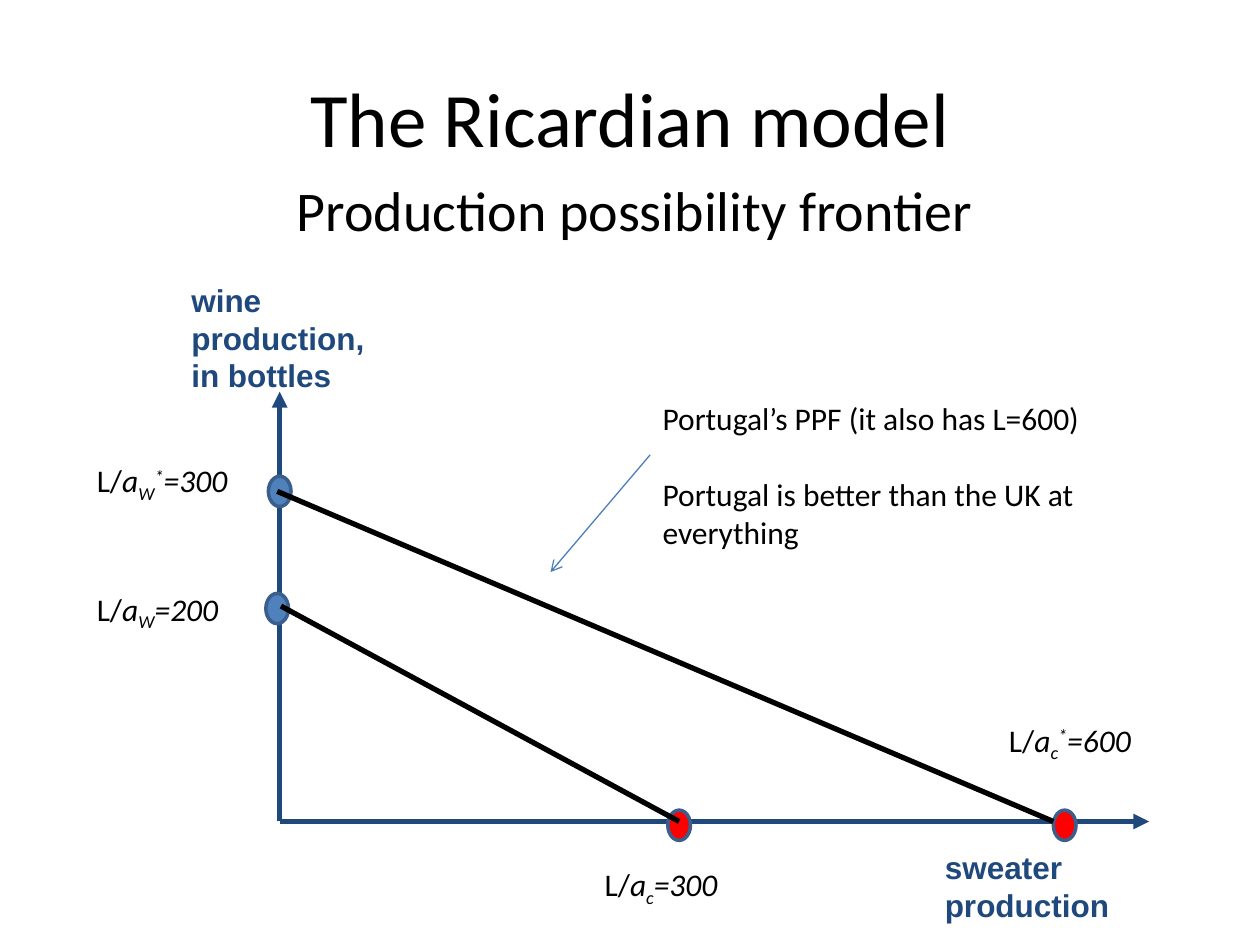
from lxml import etree
from pptx import Presentation
from pptx.dml.color import RGBColor
from pptx.enum.shapes import MSO_CONNECTOR, MSO_SHAPE
from pptx.enum.text import MSO_ANCHOR, PP_ALIGN
from pptx.oxml.ns import qn
from pptx.util import Inches, Pt

STRAIGHT = MSO_CONNECTOR.STRAIGHT
MARKER = MSO_SHAPE.FLOWCHART_CONNECTOR
CENTER, LEFT = PP_ALIGN.CENTER, PP_ALIGN.LEFT
MIDDLE = MSO_ANCHOR.MIDDLE
BLACK, NAVY, BLUE, RED = "000000", "1F497D", "4F81BD", "FF0000"
MARKER_EDGE, POINTER = "3A5F8C", "4B7EBC"
MARKER_W, MARKER_H = 0.18, 0.24
TITLE_ONLY = 5


def color(value):
    return RGBColor.from_string(value)


def add_run(paragraph, text, size=18, font="Calibri", ink=BLACK,
            bold=False, italic=False, baseline=0):
    """Add a run; baseline is the percent raised (or lowered, if negative)."""
    run = paragraph.add_run()
    run.text = text
    run.font.size = Pt(size)
    run.font.name = font
    run.font.bold = bold
    run.font.italic = italic
    run.font.color.rgb = color(ink)
    if baseline:
        run._r.get_or_add_rPr().set("baseline", str(baseline * 1000))


def add_text(slide, box, lines, gap=0, align=LEFT, wrap=True, **style):
    """Add a text box with one paragraph per line, gap points apart."""
    frame = slide.shapes.add_textbox(*map(Inches, box)).text_frame
    frame.word_wrap = wrap
    for index, line in enumerate(lines):
        paragraph = frame.add_paragraph() if index else frame.paragraphs[0]
        paragraph.alignment = align
        if index:
            paragraph.space_before = Pt(gap)
        add_run(paragraph, line, **style)


def add_line(slide, start, end, ink, width, arrow=None):
    line = slide.shapes.add_connector(STRAIGHT, *map(Inches, (*start, *end)))
    line.line.color.rgb = color(ink)
    line.line.width = Pt(width)
    if arrow:
        etree.SubElement(line.line._get_or_add_ln(), qn("a:tailEnd"), type=arrow)
    etree.SubElement(line._element.spPr, qn("a:effectLst"))


def add_marker(slide, center, fill):
    x, y = center
    marker = slide.shapes.add_shape(
        MARKER, Inches(x - MARKER_W / 2), Inches(y - MARKER_H / 2),
        Inches(MARKER_W), Inches(MARKER_H))
    marker.shadow.inherit = False
    marker.fill.solid()
    marker.fill.fore_color.rgb = color(fill)
    marker.line.color.rgb = color(MARKER_EDGE)
    marker.line.width = Pt(2)


def add_intercept_label(slide, box, good, amount, foreign=False):
    """Label an intercept as L/a with the good as subscript."""
    frame = slide.shapes.add_textbox(*map(Inches, box)).text_frame
    frame.word_wrap = True
    paragraph = frame.paragraphs[0]
    add_run(paragraph, "L/")
    add_run(paragraph, "a", italic=True)
    add_run(paragraph, good, italic=True, baseline=-25)
    if foreign:
        add_run(paragraph, "*", italic=True, baseline=30)
    add_run(paragraph, f"={amount}", italic=True)


def add_heading(slide, box):
    left, top, width, height = box
    title = slide.shapes.title
    title.left, title.top = Inches(left), Inches(top)
    title.width, title.height = Inches(width), Inches(height)
    title.text_frame.vertical_anchor = MIDDLE
    paragraph = title.text_frame.paragraphs[0]
    paragraph.alignment = CENTER
    add_run(paragraph, "The Ricardian model", size=44)
    add_text(slide, (left + 0.04, top + 1.04, width, 0.65),
             ["Production possibility frontier"], align=CENTER, size=32)


def add_axes(slide, box):
    left, top, width, height = box
    origin = (left, top + height)
    axis_style = dict(font="Arial", ink=NAVY, bold=True)
    add_text(slide, (left - 0.8, top - 0.93, 1.59, 1.01),
             ["wine", "production,", "in bottles"], wrap=False, **axis_style)
    add_line(slide, origin, (left, top), NAVY, 3, "triangle")
    add_line(slide, origin, (left + width, top + height), NAVY, 3, "triangle")
    add_text(slide, (left + width - 1.72, top + height + 0.16, 1.55, 0.71),
             ["sweater", "production"], **axis_style)


def add_frontiers(slide, box):
    """Draw both countries' frontiers with their intercepts and labels."""
    left, top, width, height = box
    base = top + height
    # wine and sweater markers, then both ends of the frontier
    home = ((left - 0.02, base - 1.69), (left + 3.17, base + 0.03),
            (left + 0.01, base - 1.71), (left + 3.17, base))
    abroad = ((left, base - 2.62), (left + 6.23, base + 0.03),
              (left - 0.02, base - 2.62), (left + 6.14, base))
    for wine, sweaters, start, end in (home, abroad):
        add_marker(slide, wine, BLUE)
        add_marker(slide, sweaters, RED)
        add_line(slide, start, end, BLACK, 3)

    wine_left = left - 1.55
    add_intercept_label(slide, (wine_left, base - 1.89, 1.54, 0.4), "W", 200)
    add_intercept_label(slide, (wine_left, base - 2.91, 1.54, 0.4), "W", 300, True)
    add_intercept_label(slide, (left + 2.48, base + 0.3, 1.19, 0.4), "c", 300)
    add_intercept_label(slide, (left + 5.69, base - 0.85, 1.54, 0.4), "c", 600, True)


def add_comment(slide, box):
    left, top, width, height = box
    add_text(slide, box, ["Portugal’s PPF (it also has L=600)",
                          "Portugal is better than the UK at everything"], gap=21.6)
    add_line(slide, (left, top + 0.49), (left - 0.79, top + 1.42),
             POINTER, 0.75, "arrow")


def main():
    deck = Presentation()
    deck.slide_width, deck.slide_height = Inches(10), Inches(7.5)
    slide = deck.slides.add_slide(deck.slide_layouts[TITLE_ONLY])
    plot = (2.22, 3.11, 6.9, 3.41)
    add_heading(slide, (0.5, 0.3, 9, 1.25))
    add_axes(slide, plot)
    add_frontiers(slide, plot)
    add_comment(slide, (5.16, 3.12, 4.09, 1.31))
    deck.save("out.pptx")


if __name__ == "__main__":
    main()
